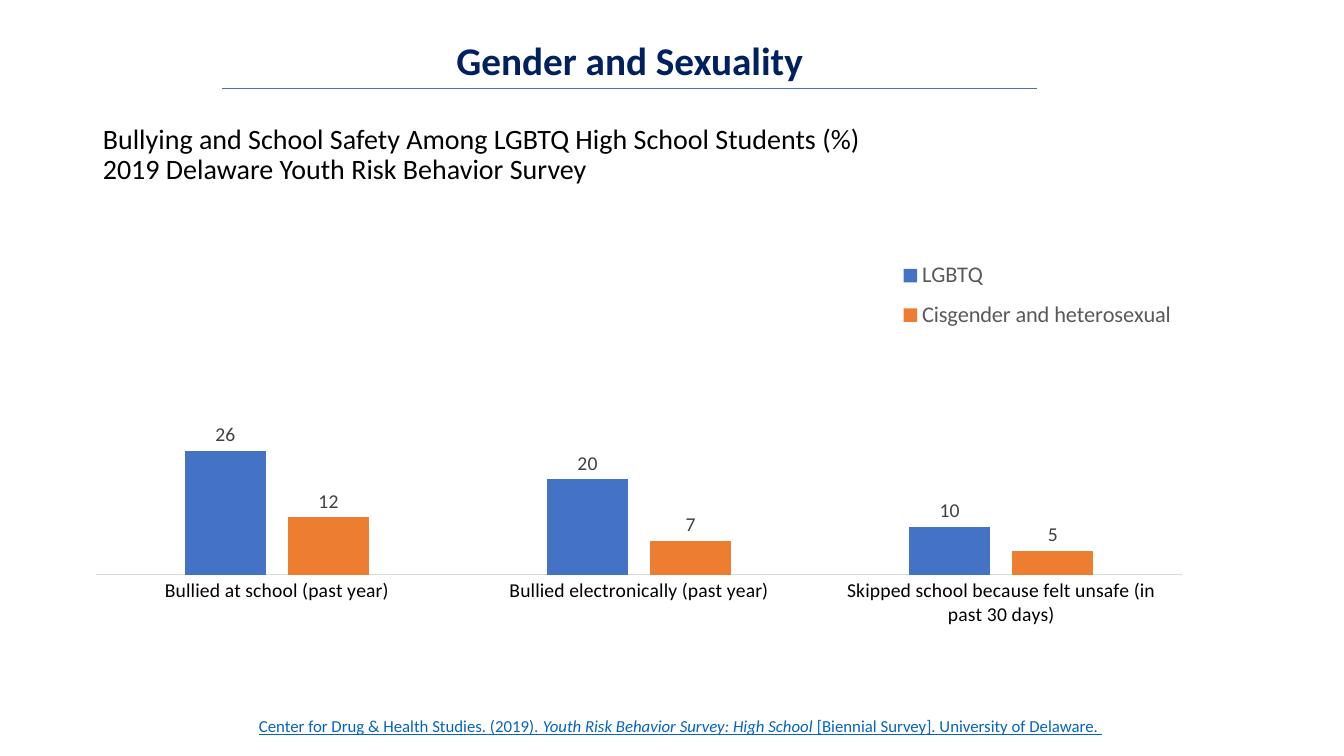
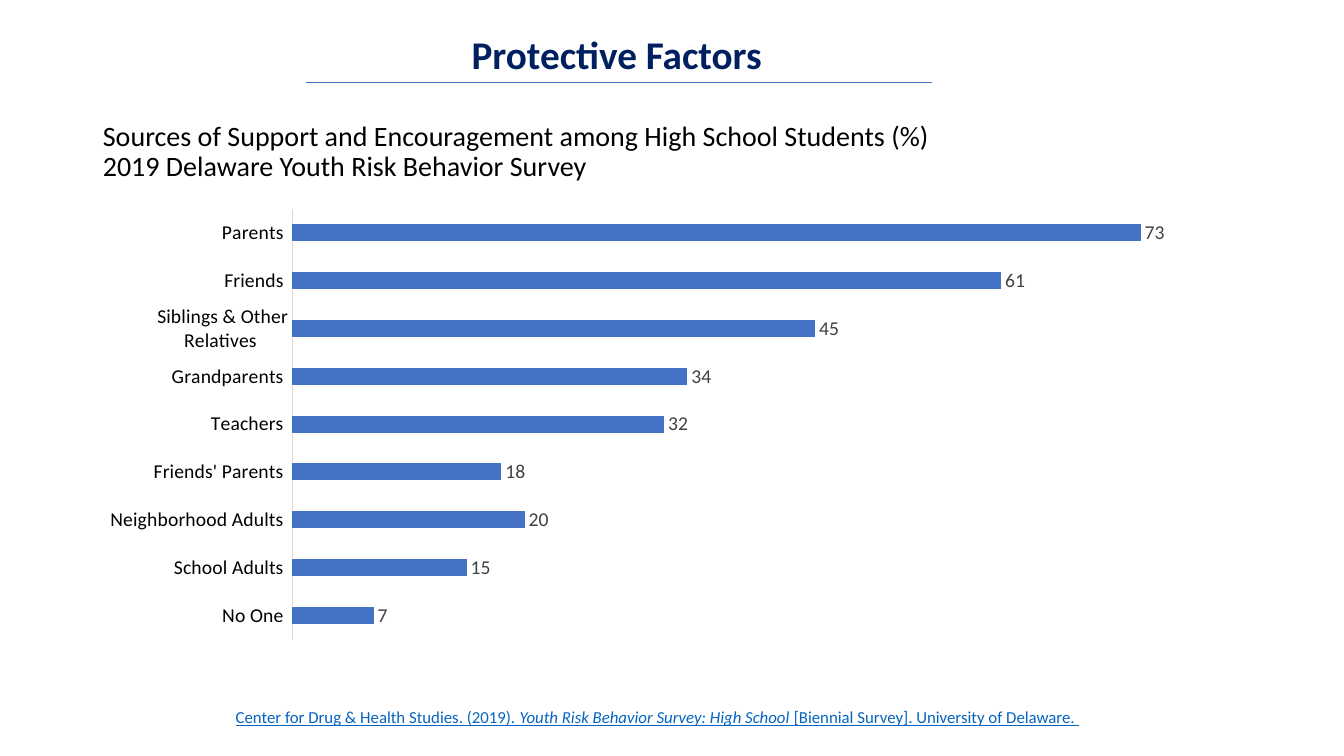
from lxml import etree
from pptx import Presentation
from pptx.chart.data import CategoryChartData
from pptx.dml.color import RGBColor
from pptx.enum import chart as ch, shapes, text
from pptx.oxml import parse_xml
from pptx.oxml.ns import nsdecls, qn
from pptx.util import Inches, Pt

FONT = "Calibri"
NAVY, BLUE, ORANGE, LINK = "002060", "4472C4", "ED7D31", "0563C1"
BLACK, DARK_GREY, GREY, PALE_GREY = "000000", "404040", "595959", "D9D9D9"
LEFT, CENTER = text.PP_ALIGN.LEFT, text.PP_ALIGN.CENTER

# (text, italic)
CITATION = [
    ("Center for Drug & Health Studies. (2019). ", False),
    ("Youth Risk Behavior Survey: High School", True),
    (" [Biennial Survey]. University of Delaware. ", False),
]

# Boxes are left, top, width, height in inches; rules are left, right, top.
SLIDES = [
    dict(
        topic="Gender and Sexuality", topic_box=(2.76, 0.31, 6.97, 0.57),
        topic_align=CENTER, rule=(2.2, 10.29, 0.88),
        title="Bullying and School Safety Among LGBTQ High School Students (%)\n"
              "2019 Delaware Youth Risk Behavior Survey",
        title_box=(0.92, 1.24, 11.5, 0.61),
        citation_box=(2.41, 7.04, 10.17, 0.31),
        chart=dict(
            kind=ch.XL_CHART_TYPE.COLUMN_CLUSTERED, box=(0.63, 1.86, 11.5, 4.76),
            categories=["Bullied at school (past year)",
                        "Bullied electronically (past year)",
                        "Skipped school because felt unsafe (in past 30 days)"],
            series=[("LGBTQ", BLUE, [26, 20, 10]),
                    ("Cisgender and heterosexual", ORANGE, [12, 7, 5])],
            top=75, gap=219, overlap=-27,
            plot=(0.028, 0.062, 0.937, 0.745), legend=(0.71, 0.13, 0.26, 0.19)),
    ),
    dict(
        topic="Protective Factors", topic_box=(4.58, 0.25, 3.23, 0.57),
        topic_align=LEFT, rule=(3.04, 9.24, 0.82),
        title="Sources of Support and Encouragement among High School Students (%)\n"
              "2019 Delaware Youth Risk Behavior Survey",
        title_box=(0.92, 1.18, 11.5, 0.67),
        citation_box=(2.18, 6.95, 8.97, 0.31),
        chart=dict(
            kind=ch.XL_CHART_TYPE.BAR_CLUSTERED, box=(0.92, 2, 11.5, 4.76),
            categories=["No One ", "School Adults ", "Neighborhood Adults ",
                        "Friends' Parents ", "Teachers ", "Grandparents ",
                        "Siblings & Other Relatives ", "Friends ", "Parents "],
            series=[("Series 1", BLUE, [7, 15, 20, 18, 32, 34, 45, 61, 73])],
            gap=182, label_format="#,##0",
            plot=(0.172, 0.015, 0.802, 0.898)),
    ),
]


def rgb(color):
    return RGBColor.from_string(color)


def inches(values):
    return [Inches(value) for value in values]


def style_font(font, size, color, bold=None, italic=None, underline=None):
    font.name, font.size, font.color.rgb = FONT, Pt(size), rgb(color)
    font.bold, font.italic, font.underline = bold, italic, underline


def add_text(slide, box, runs, align=LEFT, spacing=None, indent=0, **font):
    """Add a one-paragraph text box; runs are (text, italic) pairs."""
    frame = slide.shapes.add_textbox(*inches(box)).text_frame
    frame.word_wrap = True
    paragraph = frame.paragraphs[0]
    paragraph.alignment, paragraph.line_spacing = align, spacing
    if indent:
        paragraph._p.get_or_add_pPr().set("marL", str(Inches(indent)))
    for words, italic in runs:
        run = paragraph.add_run()
        run.text = words
        style_font(run.font, italic=italic, **font)


def style_master_title(master):
    """Set the size on the master, so line breaks follow it too."""
    title_style = master._element.find(".//" + qn("p:titleStyle"))
    title_style.find(".//" + qn("a:defRPr")).set("sz", "2000")


def fill_title(slide, words, box):
    title = slide.shapes.title
    title.left, title.top, title.width, title.height = inches(box)
    frame = title.text_frame
    frame.auto_size = text.MSO_AUTO_SIZE.NONE
    frame.vertical_anchor = text.MSO_ANCHOR.MIDDLE
    paragraph = frame.paragraphs[0]
    paragraph.text = words.replace("\n", "\v")
    paragraph.alignment, paragraph.line_spacing = LEFT, 0.9
    for run in paragraph.runs:
        style_font(run.font, 20, BLACK)


def add_rule(slide, left, right, top):
    rule = slide.shapes.add_connector(
        shapes.MSO_CONNECTOR.STRAIGHT, *inches((left, top, right, top)))
    rule.line.color.rgb, rule.line.width = rgb(BLUE), Pt(0.5)
    etree.SubElement(rule._element.spPr, qn("a:effectLst"))


def manual_layout(fractions, inner=False):
    target = '<c:layoutTarget val="inner"/>' if inner else ""
    modes = "".join(f'<c:{side}Mode val="edge"/>' for side in "xy")
    sizes = "".join(f'<c:{side} val="{value}"/>' for side, value in zip("xywh", fractions))
    return parse_xml(f'<c:layout {nsdecls("c")}><c:manualLayout>{target}{modes}{sizes}'
                     '</c:manualLayout></c:layout>')


def add_legend(chart, fractions):
    chart.has_legend = True
    legend = chart.legend
    legend.position, legend.include_in_layout = ch.XL_LEGEND_POSITION.RIGHT, False
    style_font(legend.font, 16, GREY)
    element = legend._element
    for automatic in element.findall(qn("c:layout")):
        element.remove(automatic)
    element.find(qn("c:legendPos")).addnext(manual_layout(fractions))


def add_bars(slide, kind, box, categories, series, gap, plot, top=None, overlap=0,
             label_format="General", legend=None):
    data = CategoryChartData()
    data.categories = categories
    for name, _, values in series:
        data.add_series(name, values)
    chart = slide.shapes.add_chart(kind, *inches(box), data).chart
    chart.has_title = False
    style_font(chart.font, 10, BLACK)

    category_axis, value_axis = chart.category_axis, chart.value_axis
    category_axis.major_tick_mark = ch.XL_TICK_MARK.NONE
    category_axis.format.line.color.rgb = rgb(PALE_GREY)
    category_axis.format.line.width = Pt(0.75)
    style_font(category_axis.tick_labels.font, 14, BLACK)
    if top:
        value_axis.minimum_scale, value_axis.maximum_scale = 0, top
    value_axis.has_major_gridlines = value_axis.visible = False

    bars = chart.plots[0]
    bars.gap_width, bars.overlap, bars.vary_by_categories = gap, overlap, False
    for bar, (_, color, _) in zip(bars.series, series):
        bar.format.fill.solid()
        bar.format.fill.fore_color.rgb = rgb(color)
        labels = bar.data_labels
        labels.show_value, labels.position = True, ch.XL_LABEL_POSITION.OUTSIDE_END
        labels.number_format, labels.number_format_is_linked = label_format, False
        style_font(labels.font, 14, DARK_GREY)

    plot_area = chart._chartSpace.chart.plotArea
    for automatic in plot_area.findall(qn("c:layout")):
        plot_area.remove(automatic)
    plot_area.insert(0, manual_layout(plot, inner=True))
    chart.has_legend = False
    if legend:
        add_legend(chart, legend)


def main():
    deck = Presentation()
    deck.slide_width, deck.slide_height = inches((13.33, 7.5))
    style_master_title(deck.slide_master)
    title_only = deck.slide_layouts[5]
    for content in SLIDES:
        slide = deck.slides.add_slide(title_only)
        fill_title(slide, content["title"], content["title_box"])
        add_text(slide, content["topic_box"], [(content["topic"], False)],
                 align=content["topic_align"], size=28, color=NAVY, bold=True)
        add_rule(slide, *content["rule"])
        add_bars(slide, **content["chart"])
        add_text(slide, content["citation_box"], CITATION, spacing=1.07, indent=0.06,
                 size=12, color=LINK, underline=True)
    deck.save("out.pptx")


if __name__ == "__main__":
    main()
